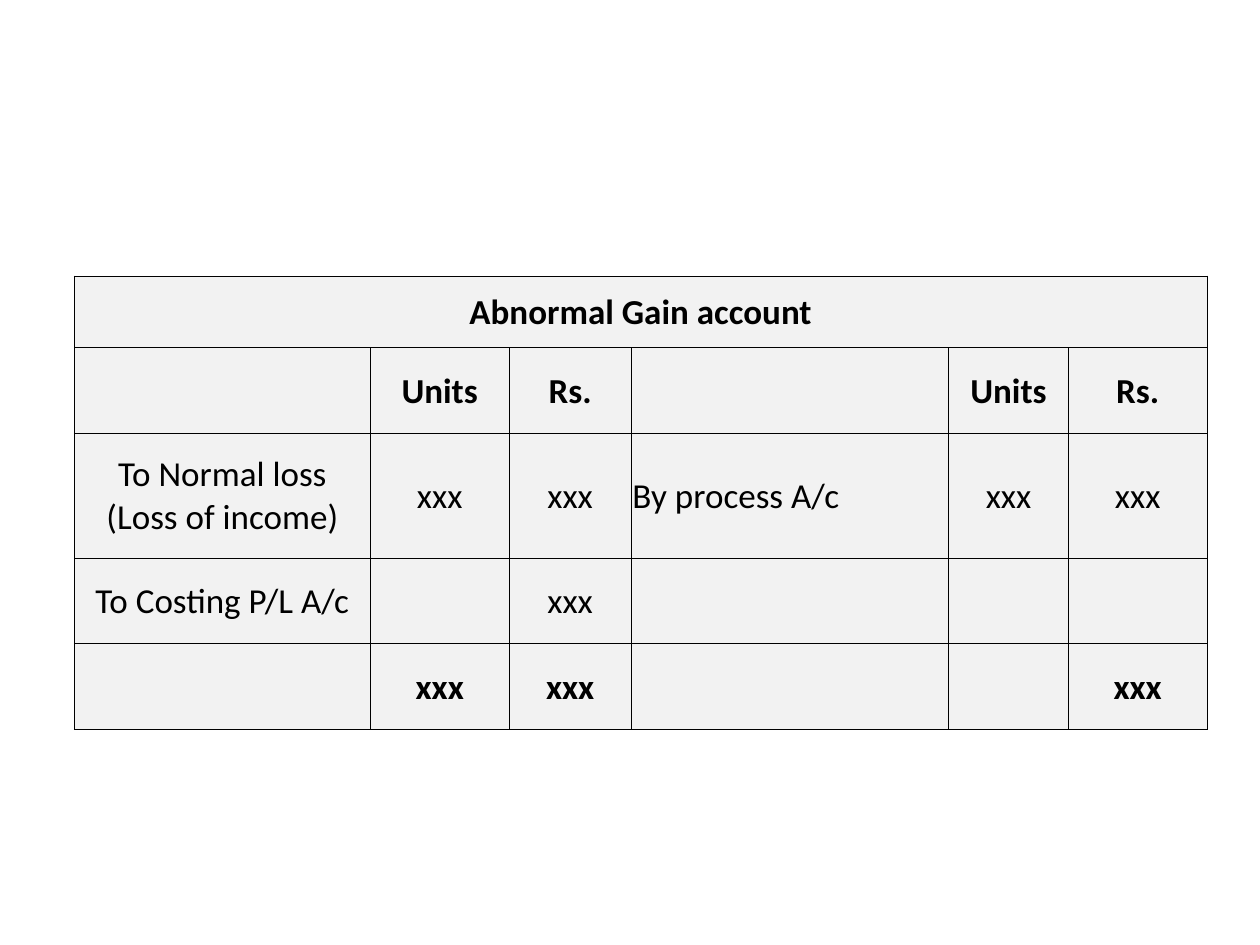
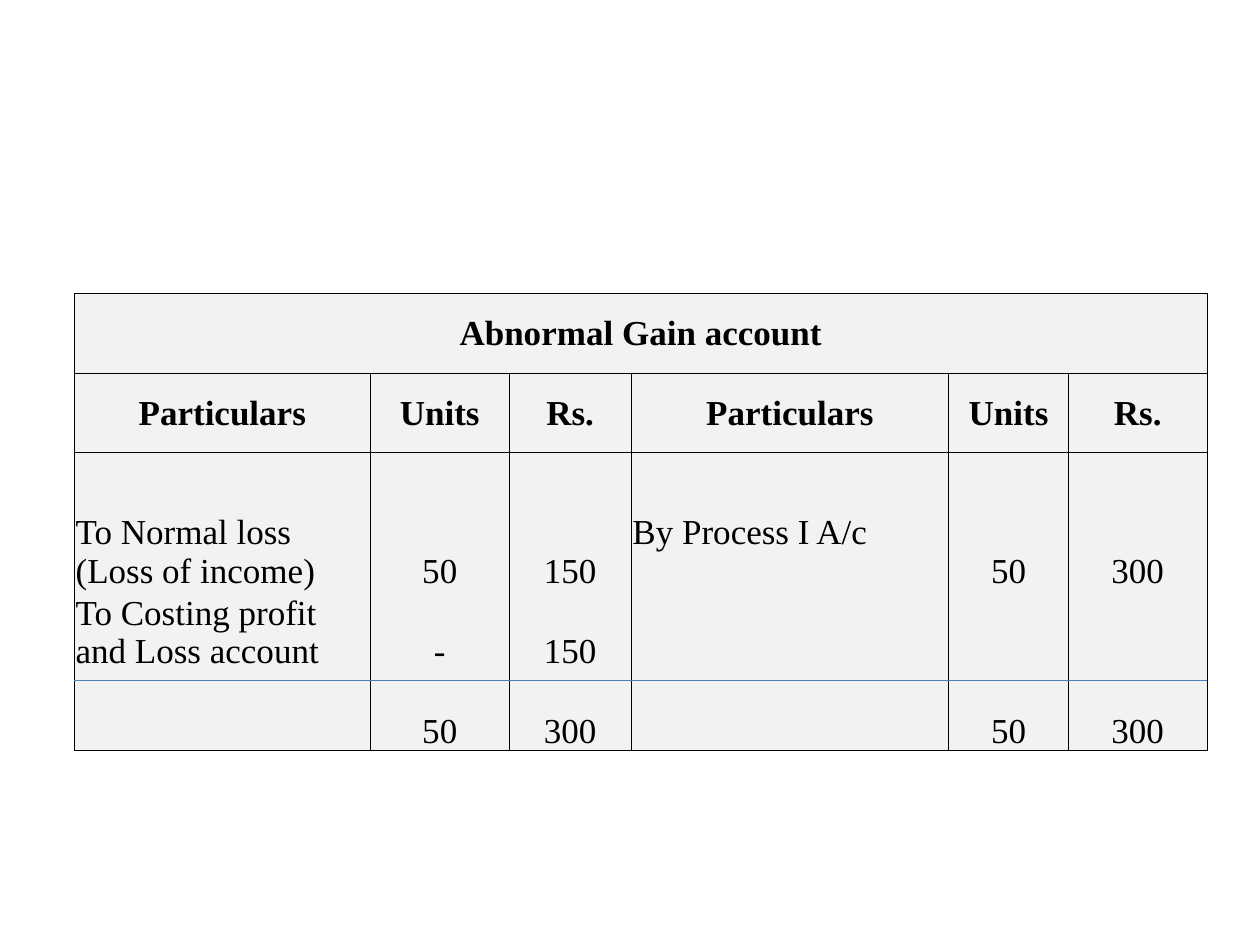
"""Build two slides with abnormal gain account tables."""
from lxml import etree
from pptx import Presentation
from pptx.dml.color import RGBColor
from pptx.enum.shapes import MSO_CONNECTOR
from pptx.enum.text import MSO_ANCHOR as ANCHOR, PP_ALIGN as ALIGN
from pptx.oxml.ns import qn
from pptx.util import Inches, Pt

COLORS = {"text": "000000", "border": "000000", "cell": "F2F2F2", "rule": "4B7EBC"}
LEFT = 0.59
COLS = [2.35, 1.1, 0.97, 2.52, 0.95, 1.1]
TITLE = "Abnormal Gain account"
TEXT_SIZE = 20
LINE_HEIGHT = 0.31

ACCOUNTS = [
    {
        "font": "Calibri",
        "top": 2.19,
        "heights": [0.57, 0.68, 0.99, 0.68, 0.68],
        "rows": [
            ["", "Units", "Rs.", "", "Units", "Rs."],
            ["To Normal loss\n(Loss of income)", "xxx", "xxx", "By process A/c", "xxx", "xxx"],
            ["To Costing P/L A/c", "", "xxx", "", "", ""],
            ["", "xxx", "xxx", "", "", "xxx"],
        ],
        "bold_rows": {0, 1, 4},
        "left_cells": {(2, 3)},
        "raised_cells": set(),
        "body_anchor": ANCHOR.MIDDLE,
        "open_body": False,
        "rule_y": None,
    },
    {
        "font": "Times New Roman",
        "top": 2.33,
        "heights": [0.63, 0.63, 1.1, 0.64, 0.63],
        "rows": [
            ["Particulars", "Units", "Rs.", "Particulars", "Units", "Rs."],
            ["To Normal loss\n(Loss of income)", "50", "150", "By Process I A/c", "50", "300"],
            ["To Costing profit and Loss account", "-", "150", "", "", ""],
            ["", "50", "300", "", "50", "300"],
        ],
        "bold_rows": {0, 1},
        "left_cells": {(2, 0), (2, 3), (3, 0)},
        "raised_cells": {(2, 3)},
        "body_anchor": ANCHOR.BOTTOM,
        "open_body": True,
        "rule_y": 5.4,
    },
]


def rgb(name):
    return RGBColor.from_string(COLORS[name])


def set_borders(cell, drawn):
    tc_pr = cell._tc.get_or_add_tcPr()
    for side in "LRTB":
        ln = etree.SubElement(tc_pr, qn(f"a:ln{side}"), w=str(Pt(0.5)))
        if side in drawn:
            fill = etree.SubElement(ln, qn("a:solidFill"))
            etree.SubElement(fill, qn("a:srgbClr"), val=COLORS["border"])
        else:
            etree.SubElement(ln, qn("a:noFill"))


def write_cell(cell, text, *, font, bold, align, anchor, bottom=0):
    cell.margin_left = cell.margin_right = cell.margin_top = Inches(0.01)
    cell.margin_bottom = Inches(bottom)
    cell.vertical_anchor = anchor
    tf = cell.text_frame
    tf.text = text
    for p in tf.paragraphs:
        p.alignment = align
        p.font.size = Pt(TEXT_SIZE)
        for r in p.runs:
            r.font.name = font
            r.font.size = Pt(TEXT_SIZE)
            r.font.bold = bold
            r.font.color.rgb = rgb("text")


def add_account(slide, account):
    heights = account["heights"]
    rows = [[TITLE] + [""] * (len(COLS) - 1)] + account["rows"]
    table = slide.shapes.add_table(
        len(rows), len(COLS), Inches(LEFT), Inches(account["top"]),
        Inches(sum(COLS)), Inches(sum(heights))).table
    for column, width in zip(table.columns, COLS):
        column.width = Inches(width)
    last = len(rows) - 1
    for i, (row, height) in enumerate(zip(rows, heights)):
        table.rows[i].height = Inches(height)
        drawn = "LRTB"
        if account["open_body"] and i >= 2:
            drawn = "LR" + ("T" if i == 2 else "") + ("B" if i == last else "")
        for j, text in enumerate(row):
            cell = table.cell(i, j)
            set_borders(cell, drawn)
            cell.fill.solid()
            cell.fill.fore_color.rgb = rgb("cell")
            write_cell(
                cell, text, font=account["font"], bold=i in account["bold_rows"],
                align=ALIGN.LEFT if (i, j) in account["left_cells"] else ALIGN.CENTER,
                anchor=ANCHOR.MIDDLE if i < 2 else account["body_anchor"],
                bottom=LINE_HEIGHT if (i, j) in account["raised_cells"] else 0)
    table.cell(0, 0).merge(table.cell(0, len(COLS) - 1))


def add_rule(slide, y):
    line = slide.shapes.add_connector(
        MSO_CONNECTOR.STRAIGHT, Inches(LEFT), Inches(y),
        Inches(LEFT + sum(COLS)), Inches(y))
    line.line.color.rgb = rgb("rule")
    line.line.width = Pt(0.75)
    etree.SubElement(line._element.spPr, qn("a:effectLst"))


def main():
    prs = Presentation()
    prs.slide_width, prs.slide_height = Inches(10), Inches(7.5)
    for account in ACCOUNTS:
        slide = prs.slides.add_slide(prs.slide_layouts[6])
        add_account(slide, account)
        if account["rule_y"]:
            add_rule(slide, account["rule_y"])
    prs.save("out.pptx")


if __name__ == "__main__":
    main()
